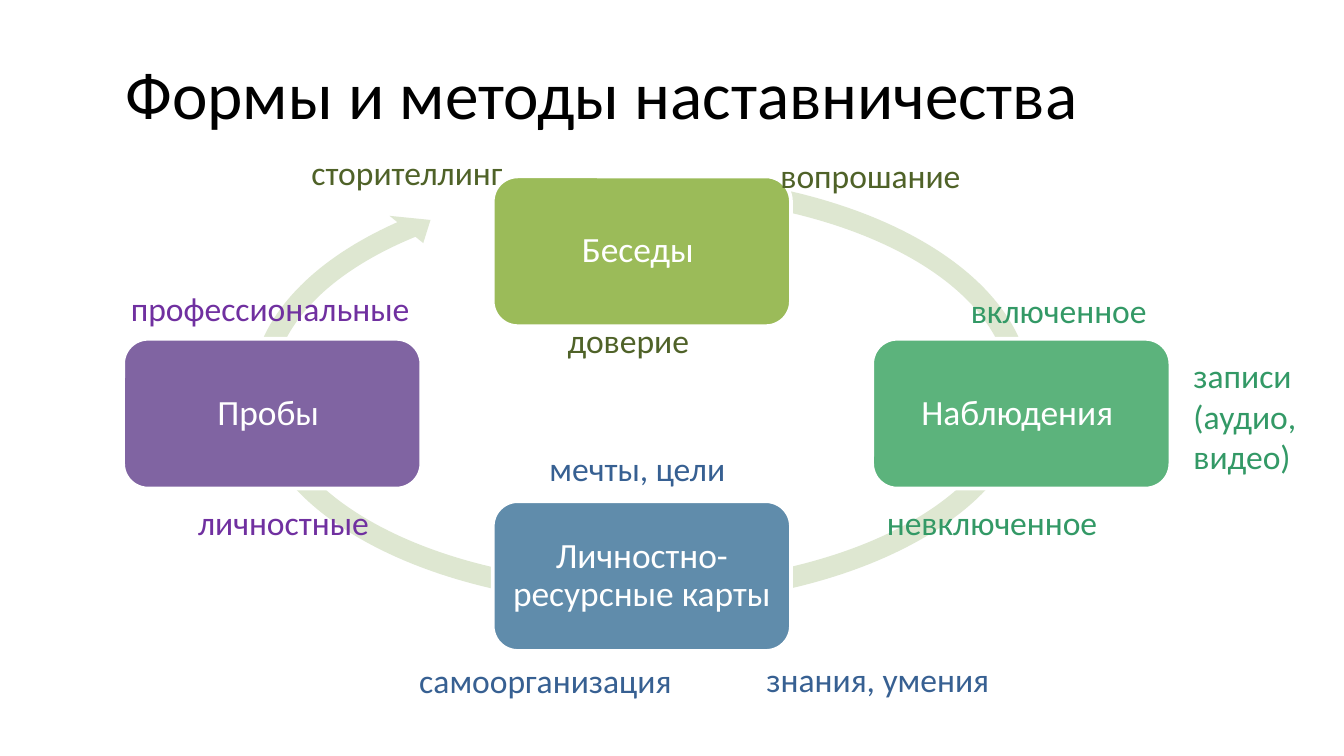
from dataclasses import dataclass

from pptx import Presentation
from pptx.dml.color import RGBColor
from pptx.enum.shapes import MSO_SHAPE as Preset
from pptx.enum.text import MSO_ANCHOR as Anchor, MSO_AUTO_SIZE as AutoSize, PP_ALIGN as Align
from pptx.util import Pt

PX = 9525  # EMU in one px, 96 px to the inch
FONT = "Calibri"
BLACK = RGBColor(0x00, 0x00, 0x00)
WHITE = RGBColor(0xFF, 0xFF, 0xFF)
PALE_GREEN = RGBColor(0xDE, 0xE7, 0xD1)
OLIVE = RGBColor(0x9B, 0xBB, 0x59)
GREEN = RGBColor(0x5C, 0xB3, 0x7C)
BLUE = RGBColor(0x60, 0x8C, 0xAB)
PURPLE = RGBColor(0x80, 0x64, 0xA2)
DARK_OLIVE = RGBColor(0x4F, 0x62, 0x28)
DARK_GREEN = RGBColor(0x33, 0x99, 0x66)
DARK_BLUE = RGBColor(0x37, 0x60, 0x92)
DARK_PURPLE = RGBColor(0x70, 0x30, 0xA0)

FORM_WIDTH, FORM_HEIGHT, FORM_INSET = 213, 107, 13
LABEL_HEIGHT = 38
TOP_Y, MIDDLE_Y, BOTTOM_Y = 179, 295, 411
CENTER_X = 458


@dataclass
class Form:
    """A mentoring form, placed by its centre."""
    text: str
    x: int
    y: int
    color: RGBColor


@dataclass
class Method:
    """A label beside a form, placed by its top left corner."""
    text: str
    left: int
    top: int
    width: int
    color: RGBColor
    height: int = LABEL_HEIGHT


FORMS = [
    Form("Беседы ", CENTER_X, TOP_Y, OLIVE),
    Form("Наблюдения ", 729, MIDDLE_Y, GREEN),
    Form("Личностно-ресурсные карты", CENTER_X, BOTTOM_Y, BLUE),
    Form("Пробы ", 194, MIDDLE_Y, PURPLE),
]

METHODS = [
    Method("сторителлинг", 213, 104, 157, DARK_OLIVE),
    Method("вопрошание", 548, 106, 150, DARK_OLIVE),
    Method("доверие", 396, 224, 108, DARK_OLIVE),
    Method("включенное", 684, 202, 147, DARK_GREEN),
    Method("записи\v(аудио, \vвидео)", 843, 249, 99, DARK_GREEN, 97),
    Method("невключенное", 624, 354, 172, DARK_GREEN),
    Method("мечты, цели", 383, 315, 151, DARK_BLUE),
    Method("знания, умения", 538, 466, 181, DARK_BLUE),
    Method("самоорганизация", 290, 467, 202, DARK_BLUE),
    Method("профессиональные", 84, 201, 221, DARK_PURPLE),
    Method("личностные", 132, 354, 143, DARK_PURPLE),
]


def px(*lengths: int) -> list[int]:
    return [length * PX for length in lengths]


def write(frame, text: str, *, size: int, color: RGBColor, align=Align.LEFT,
          anchor=Anchor.TOP, wrap=True, fit=AutoSize.NONE, spacing=1.0) -> None:
    frame.text = text
    frame.word_wrap = wrap
    frame.auto_size = fit
    frame.vertical_anchor = anchor
    paragraph = frame.paragraphs[0]
    paragraph.alignment = align
    paragraph.line_spacing = spacing
    for run in paragraph.runs:
        run.font.name = FONT
        run.font.size = Pt(size)
        run.font.color.rgb = color


def draw_title(slide, text: str) -> None:
    title = slide.shapes.title
    title.left, title.top, title.width, title.height = px(80, 21, 848, 90)
    write(title.text_frame, text, size=36, color=BLACK, anchor=Anchor.MIDDLE)


def draw_cycle(slide) -> None:
    cycle = slide.shapes.add_shape(Preset.CIRCULAR_ARROW, *px(172, 117, 572, 323))
    for index, value in enumerate((0.047, 2.729, 128.604, 180.111, 0.048)):
        cycle.adjustments[index] = value
    cycle.shadow.inherit = False
    cycle.fill.solid()
    cycle.fill.fore_color.rgb = PALE_GREEN
    cycle.line.fill.background()


def draw_form(slide, form: Form) -> None:
    left, top = form.x - FORM_WIDTH // 2, form.y - FORM_HEIGHT // 2
    box = slide.shapes.add_shape(Preset.ROUNDED_RECTANGLE,
                                 *px(left, top, FORM_WIDTH, FORM_HEIGHT))
    box.shadow.inherit = False
    box.fill.solid()
    box.fill.fore_color.rgb = form.color
    box.line.color.rgb = WHITE
    box.line.width = Pt(2)
    frame = box.text_frame
    # The rounded corners already inset the text by about 5 px
    frame.margin_left = frame.margin_right = (FORM_INSET - 5) * PX
    frame.margin_top = frame.margin_bottom = (FORM_INSET - 5) * PX
    write(frame, form.text, size=19, color=WHITE, align=Align.CENTER,
          anchor=Anchor.MIDDLE, spacing=0.9)


def draw_method(slide, method: Method) -> None:
    label = slide.shapes.add_textbox(
        *px(method.left, method.top, method.width, method.height))
    write(label.text_frame, method.text, size=18, color=method.color,
          wrap=False, fit=AutoSize.SHAPE_TO_FIT_TEXT)


def main() -> None:
    deck = Presentation()
    deck.slide_width, deck.slide_height = px(960, 540)
    slide = deck.slides.add_slide(deck.slide_layouts[5])  # title only

    draw_title(slide, "Формы и методы наставничества")

    # Cycle of forms
    draw_cycle(slide)
    for form in FORMS:
        draw_form(slide, form)

    # Methods around the forms
    for method in METHODS:
        draw_method(slide, method)

    deck.save("out.pptx")


if __name__ == "__main__":
    main()
